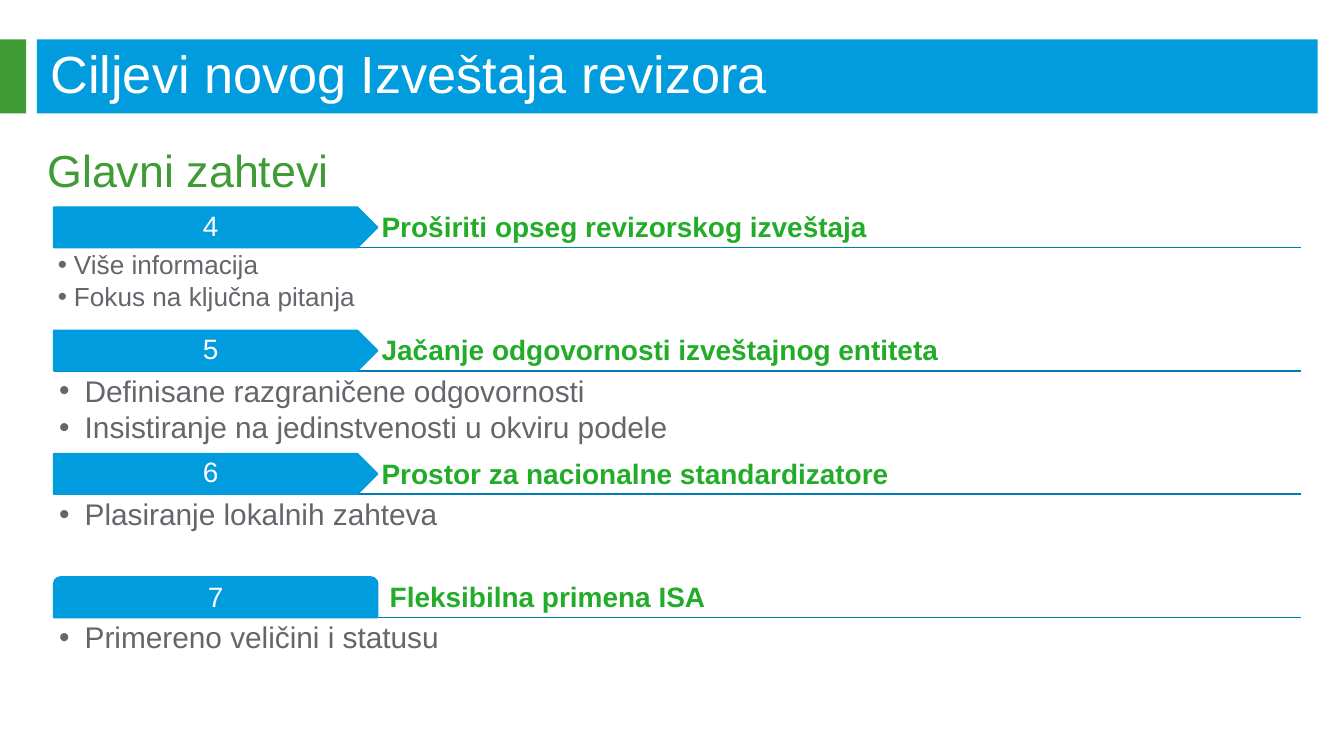
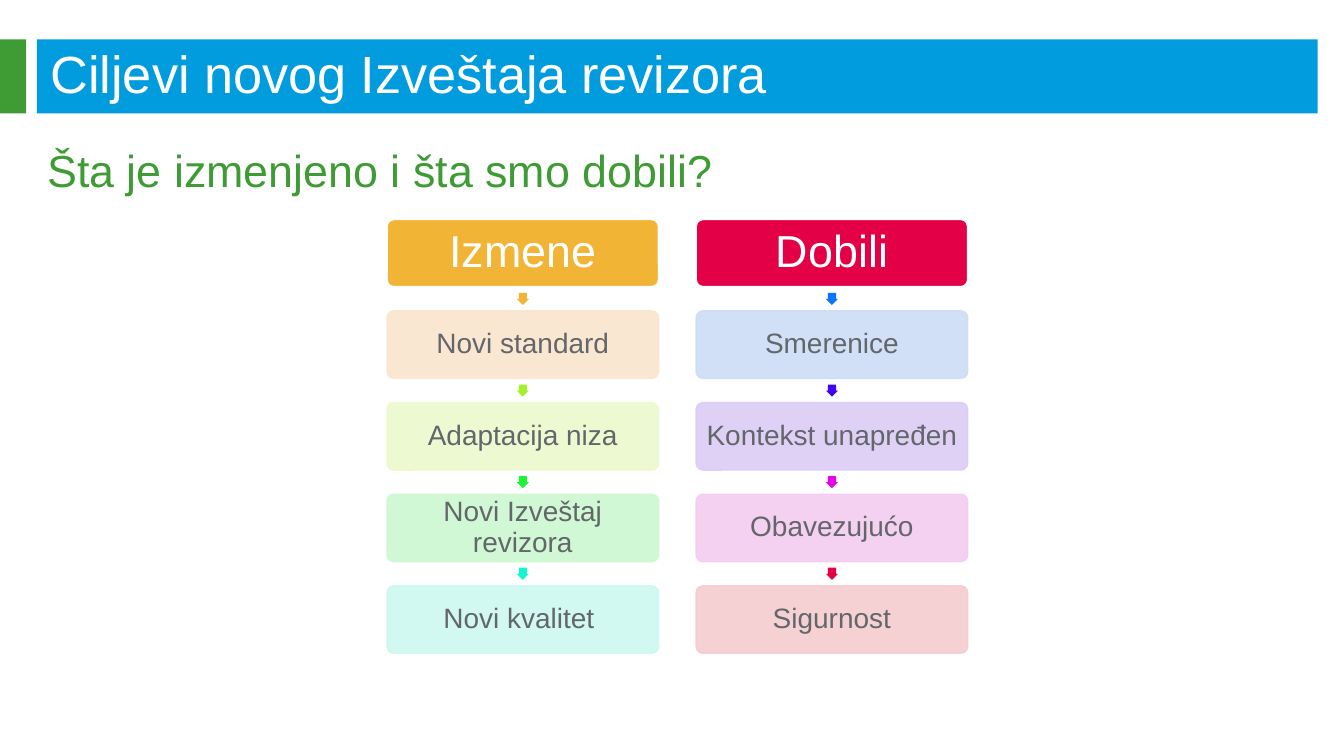
"""Builds two slides on the goals of the new audit report."""
import dataclasses

import lxml.etree
import pptx
import pptx.dml.color
import pptx.enum.shapes
import pptx.enum.text
import pptx.oxml.ns
import pptx.util

KIND = pptx.enum.shapes.MSO_SHAPE
ANCHOR = pptx.enum.text.MSO_ANCHOR
ALIGN = pptx.enum.text.PP_ALIGN


@dataclasses.dataclass(frozen=True)
class Theme:
    font: str = "Arial"
    blue: str = "009CDE"
    green: str = "3F9C35"
    lime: str = "22AC29"
    rule: str = "007DB2"
    gray: str = "63666A"
    white: str = "FFFFFF"
    title: int = 28
    head: int = 24
    label: int = 15
    line: float = 0.85


THEME = Theme()
WIDTH = 10
HEIGHT = WIDTH * 9 / 16
TITLE = "Ciljevi novog Izveštaja revizora"

GOALS = {
    "head": "Glavni zahtevi",
    "rows": [
        ("4", "Proširiti opseg revizorskog izveštaja",
         ["Više informacija", "Fokus na ključna pitanja"]),
        ("5", "Jačanje odgovornosti izveštajnog entiteta",
         ["Definisane razgraničene odgovornosti",
          "Insistiranje na jedinstvenosti u okviru podele"]),
        ("6", "Prostor za nacionalne standardizatore",
         ["Plasiranje lokalnih zahteva"]),
        ("7", "Fleksibilna primena ISA", ["Primereno veličini i statusu"]),
    ],
}
SMALL = {"size": 14, "inset": 0.03, "dent": 0.12}
LARGE = {"size": 16, "inset": 0.04, "dent": 0.19}
STYLES = [SMALL, LARGE, LARGE, LARGE]
TAGS = [(KIND.PENTAGON, 0.03)] * 3 + [(KIND.ROUND_2_SAME_RECTANGLE, 0.09)]

FLOWS = {
    "head": "Šta je izmenjeno i šta smo dobili?",
    "cols": [
        ("Izmene", "F1B434", [
            ("Novi standard", "FAE5CE", "F1B434"),
            ("Adaptacija niza", "ECF9CD", "A3F229"),
            ("Novi Izveštaj revizora", "CDF8D0", "1EF436"),
            ("Novi kvalitet ", "CDF8F0", "13F6CF"),
        ]),
        ("Dobili", "E40046", [
            ("Smerenice", "CCDDF7", "0876F8"),
            ("Kontekst unapređen", "DCCCF6", "4205F2"),
            ("Obavezujućo", "F5CCF0", "E602EB"),
            ("Sigurnost", "F5CCCF", "E40046"),
        ]),
    ],
}


def place(*shares):
    """Turns percent shares of the slide into lengths."""
    sides = (WIDTH, HEIGHT) * 2
    return [pptx.util.Inches(side * share / 100) for side, share in zip(sides, shares)]


def rgb(code):
    """Gives a colour for a hex code."""
    return pptx.dml.color.RGBColor.from_string(code)


def child(parent, tag, **attrs):
    """Adds a drawing element with attributes."""
    return lxml.etree.SubElement(parent, pptx.oxml.ns.qn(tag), attrs)


def apply(target, values):
    """Sets attributes from a dict."""
    for name, value in values.items():
        setattr(target, name, value)


def write(shape, lines, size, color, bold=False, align=ALIGN.LEFT,
          anchor=ANCHOR.TOP, inset=0.03, left=None, dent=0, space=0.9):
    """Fills a shape with formatted paragraphs."""
    frame = shape.text_frame
    pad = pptx.util.Inches(inset)
    apply(frame, {
        "word_wrap": True, "vertical_anchor": anchor,
        "auto_size": pptx.enum.text.MSO_AUTO_SIZE.NONE,
        "margin_left": pad if left is None else pptx.util.Inches(left),
        "margin_right": pad, "margin_top": pad, "margin_bottom": pad,
    })
    for index, line in enumerate(lines):
        para = frame.add_paragraph() if index else frame.paragraphs[0]
        para.text = line
        apply(para, {"alignment": align, "line_spacing": space,
                     "space_before": pptx.util.Pt(0),
                     "space_after": pptx.util.Pt(0.15 * size if dent else 0)})
        if dent:
            para.level = 1
            props = para._p.get_or_add_pPr()
            step = pptx.util.Inches(dent)
            props.set("marL", str(step))
            props.set("indent", str(-step))
            child(props, "a:buFont", typeface=THEME.font)
            child(props, "a:buChar", char="•")
        look = {"name": THEME.font, "size": pptx.util.Pt(size), "bold": bold}
        for font in (para.font, para.runs[0].font):
            apply(font, look)
            font.color.rgb = rgb(color)


def label(slide, spot, lines, size, color, **look):
    """Adds a text box."""
    write(slide.shapes.add_textbox(*place(*spot)), lines, size, color, **look)


def block(slide, kind, spot, fill, line=None, alpha=None, adjust=()):
    """Adds a flat preset shape."""
    shape = slide.shapes.add_shape(kind, *place(*spot))
    shape.shadow.inherit = False
    shape.fill.solid()
    shape.fill.fore_color.rgb = rgb(fill)
    if line:
        shape.line.color.rgb = rgb(line)
        shape.line.width = pptx.util.Pt(THEME.line)
    else:
        shape.line.fill.background()
    for index, value in enumerate(adjust):
        shape.adjustments[index] = value
    if alpha:
        for tint in shape._element.spPr.iter(pptx.oxml.ns.qn("a:srgbClr")):
            child(tint, "a:alpha", val=str(alpha * 1000))
    return shape


def rule(slide, left, right, top):
    """Adds a thin level line."""
    ends = place(left, top, right, top)
    line = slide.shapes.add_connector(pptx.enum.shapes.MSO_CONNECTOR.STRAIGHT, *ends)
    line.line.color.rgb = rgb(THEME.rule)
    line.line.width = pptx.util.Pt(THEME.line)
    child(line._element.spPr, "a:effectLst")


def bands(slide, layout):
    """Draws the title bands and hands them to the layout."""
    for left, wide, fill in [(0, 1.96, THEME.green), (2.75, 95.3, THEME.blue)]:
        band = block(slide, KIND.RECTANGLE, (left, 5.2, wide, 9.8), fill)
        layout.shapes._spTree.insert(2, band._element)


def start(deck, layout, head):
    """Adds a slide with its title and heading."""
    slide = deck.slides.add_slide(layout)
    title = slide.shapes.title
    spot = place(2.75, 6.94, 94.5, 5.34)
    apply(title, dict(zip(("left", "top", "width", "height"), spot)))
    write(title, [TITLE], THEME.title, THEME.white, anchor=ANCHOR.MIDDLE,
          inset=0.05, left=0.1, space=1.0)
    label(slide, (2.54, 17.97, 95.3, 9.43), [head], THEME.head, THEME.green,
          inset=0.05, left=0.1, space=1.0)
    return slide


def goals(slide):
    """Draws the numbered rows."""
    left, top, pitch, high = 4, 27.4, 16.31, 5.36
    tag, full = 24.1, 92.8
    tops = [top + pitch * index for index in range(len(GOALS["rows"]))]
    for row in tops:
        rule(slide, left, left + full, row + high)
    for row, (mark, name, notes), style, (kind, pad) in zip(
            tops, GOALS["rows"], STYLES, TAGS):
        label(slide, (left + tag, row, full - tag, high), [name], THEME.label,
              THEME.lime, bold=True, anchor=ANCHOR.BOTTOM, left=pad)
        shape = block(slide, kind, (left, row, tag, high), THEME.blue, THEME.blue)
        write(shape, [mark], THEME.label, THEME.white, align=ALIGN.CENTER,
              anchor=ANCHOR.MIDDLE)
        label(slide, (left, row + high, full, 10.68), notes, color=THEME.gray, **style)


def flows(slide):
    """Draws the two columns of steps."""
    wide, high, pitch, top = 20.2, 8.9, 12.12, 29.03
    tip, tall = 0.9, 1.6
    look = {"align": ALIGN.CENTER, "anchor": ANCHOR.MIDDLE}
    for col, (name, fill, steps) in enumerate(FLOWS["cols"]):
        left = 28.8 + 23 * col
        box = block(slide, KIND.ROUNDED_RECTANGLE, (left, top, wide, high), fill,
                    THEME.white, adjust=[0.1])
        write(box, [name], THEME.head, THEME.white, **look)
        for index, (text, tint, hue) in enumerate(steps, 1):
            row = top + pitch * index
            gap = pitch - high
            spot = (left + (wide - tip) / 2, row - (gap + tall) / 2, tip, tall)
            arrow = block(slide, KIND.RIGHT_ARROW, spot, hue, adjust=[0.67, 0.5])
            arrow.rotation = 90
            box = block(slide, KIND.ROUNDED_RECTANGLE, (left, row, wide, high), tint,
                        tint, 90, [0.1])
            write(box, [text], THEME.label, THEME.gray, inset=0.02, **look)


def main():
    """Builds and saves the deck."""
    deck = pptx.Presentation()
    apply(deck, {"slide_width": pptx.util.Inches(WIDTH),
                 "slide_height": pptx.util.Inches(HEIGHT)})
    layout = deck.slide_layouts.get_by_name("Title Only")
    first = start(deck, layout, GOALS["head"])
    bands(first, layout)
    goals(first)
    flows(start(deck, layout, FLOWS["head"]))
    deck.save("out.pptx")


if __name__ == "__main__":
    main()
